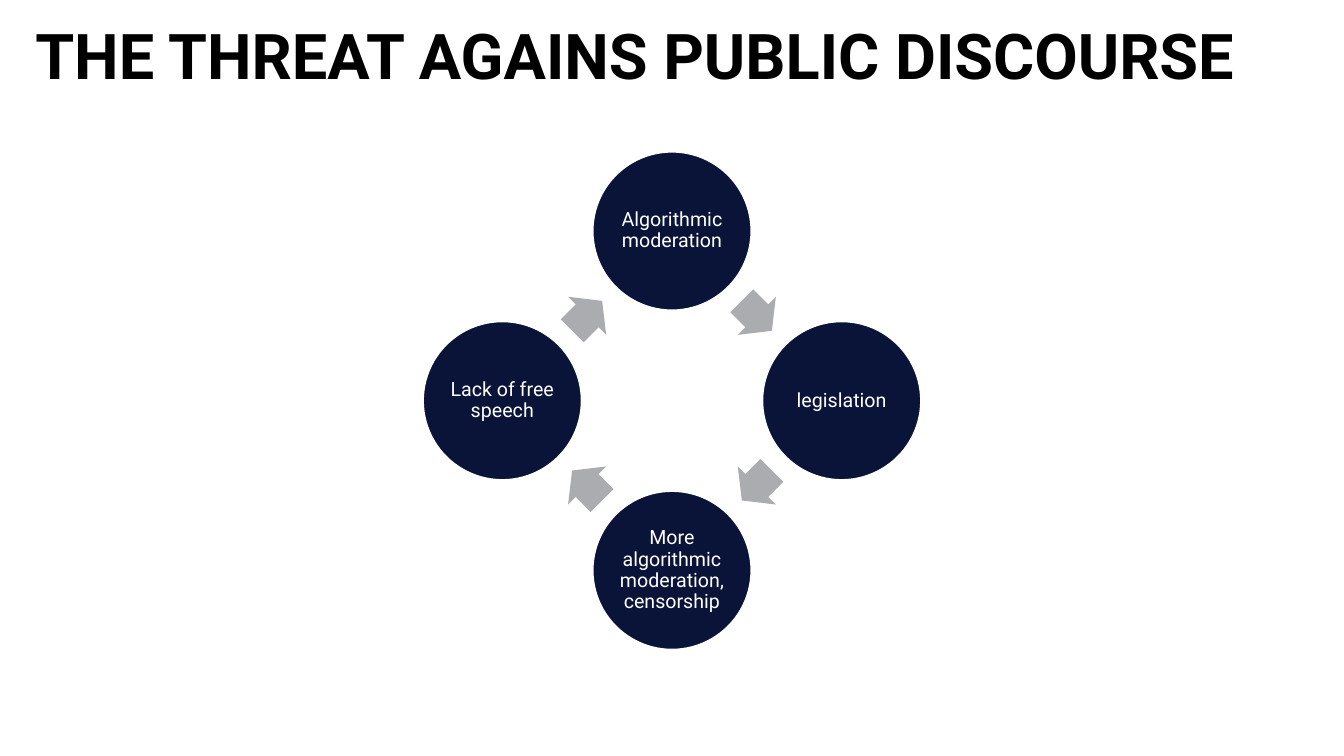
import math

from pptx import Presentation
from pptx.dml.color import RGBColor
from pptx.enum import shapes, text
from pptx.util import Inches, Pt

WIDTH, HEIGHT = 13.33, 7.5
COLOURS = {"title": "000000", "circle": "0A1439", "arrow": "ABACAF", "light": "FFFFFF"}
STAGES = [
    "Algorithmic moderation",
    "legislation",
    "More algorithmic moderation, censorship",
    "Lack of free speech",
]


def colour(name):
    return RGBColor.from_string(COLOURS[name])


def apply(target, formats):
    for name, value in formats.items():
        setattr(target, name, value)


def write(shape, words, margin, frame_formats, para_formats, font_formats, font_colour):
    frame = shape.text_frame
    frame.text = words
    sides = ("margin_left", "margin_top", "margin_right", "margin_bottom")
    apply(frame, {side: Inches(margin) for side in sides})
    apply(frame, {"word_wrap": True, "auto_size": text.MSO_AUTO_SIZE.NONE, **frame_formats})
    para = frame.paragraphs[0]
    apply(para, para_formats)
    span = para.runs[0]
    apply(span.font, {"name": "Roboto", **font_formats})
    span.font.color.rgb = colour(font_colour)


def add_centred(page, kind, centre, size, fill):
    """Add a filled preset shape around a centre point."""
    corner = [middle - length / 2 for middle, length in zip(centre, size)]
    shape = page.shapes.add_shape(kind, *map(Inches, (*corner, *size)))
    shape.shadow.inherit = False
    shape.fill.solid()
    shape.fill.fore_color.rgb = colour(fill)
    return shape


def place_title(page, box, words):
    title = page.shapes.title
    apply(title, dict(zip(("left", "top", "width", "height"), map(Inches, box))))
    write(title, words, 0,
          {"vertical_anchor": text.MSO_ANCHOR.TOP},
          {"alignment": text.PP_ALIGN.LEFT, "line_spacing": 0.89},
          {"size": Pt(45), "bold": True}, "title")


def draw_stage(page, centre, diameter, words):
    circle = add_centred(page, shapes.MSO_SHAPE.OVAL, centre, (diameter, diameter), "circle")
    circle.line.color.rgb = colour("light")
    circle.line.width = Pt(2)
    write(circle, words, 0.02,
          {"vertical_anchor": text.MSO_ANCHOR.MIDDLE},
          {"alignment": text.PP_ALIGN.CENTER, "line_spacing": 0.9},
          {"size": Pt(14)}, "light")


def draw_arrow(page, centre, size, rotation):
    arrow = add_centred(page, shapes.MSO_SHAPE.RIGHT_ARROW, centre, size, "arrow")
    arrow.line.fill.background()
    arrow.adjustments[0], arrow.adjustments[1] = 0.6, 0.5
    arrow.rotation = rotation


def draw_cycle(page, box, stages):
    """Set the stages clockwise from the top of a square box, with arrows between."""
    left, top, side = box
    diameter = side * 0.32
    radius = (side - diameter) / 2
    step = 360 / len(stages)
    arrow_radius = radius * math.cos(math.radians(step / 2))

    def point(angle, distance):
        turn = math.radians(angle)
        return (left + side / 2 + distance * math.sin(turn),
                top + side / 2 - distance * math.cos(turn))

    for index, words in enumerate(stages):
        angle = index * step
        draw_stage(page, point(angle, radius), diameter, words)
        halfway = angle + step / 2
        draw_arrow(page, point(halfway, arrow_radius),
                   (side * 0.085, side * 0.108), halfway)


def main():
    deck = Presentation()
    deck.slide_width, deck.slide_height = Inches(WIDTH), Inches(HEIGHT)
    page = deck.slides.add_slide(deck.slide_layouts[5])
    place_title(page, (0.35, 0.25, 12.64, 0.82), "THE THREAT AGAINS PUBLIC DISCOURSE")
    side = HEIGHT * 0.66
    draw_cycle(page, ((WIDTH - side) / 2, HEIGHT * 0.2, side), STAGES)
    deck.save("out.pptx")


if __name__ == "__main__":
    main()
